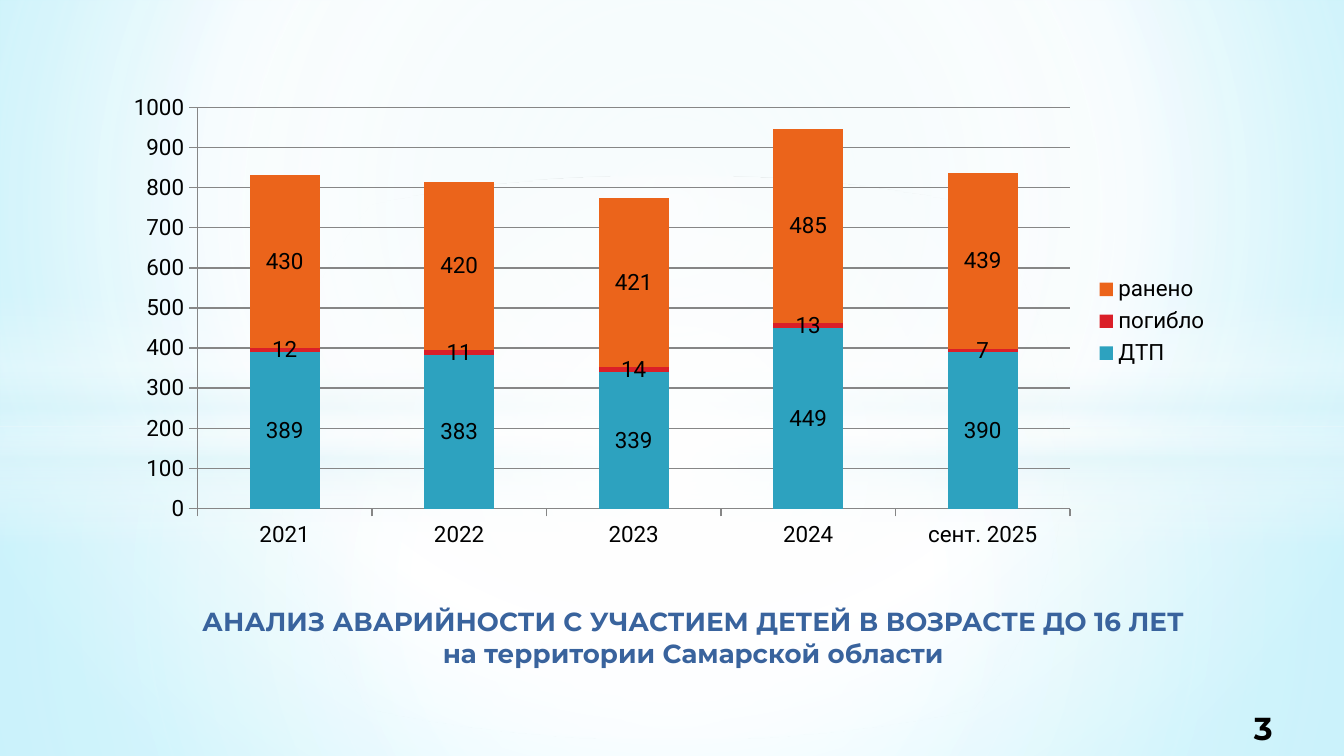
"""Builds a slide with a stacked column chart of road accidents involving children."""
from lxml import etree
from pptx import Presentation
from pptx import util as u
from pptx.chart.data import CategoryChartData
from pptx.dml.color import RGBColor
from pptx.enum import chart as ch, shapes, text
from pptx.oxml import ns

WIDTH = u.Inches(10)
HEIGHT = WIDTH * 9 // 16
COLORS = {"white": "FFFFFF", "pale": "DEF5FA", "mist": "CDEFF7", "sky": "7CE7FF",
          "black": "000000", "title": "39639D", "grid": "868686",
          "ДТП": "2DA2BF", "погибло": "DA1F28", "ранено": "EB641B"}
CENTER = (50, 50, 50, 50)
BACKDROP = [(0, "mist", 100), (60, "white", 100), (100, "sky", 100)]
GLOWS = [
    ("RECTANGLE", (0, 0.564, 1, 0.436), CENTER,
     [(0, "white", 91), (37, "white", 76), (100, "pale", 79)]),
    ("RECTANGLE", (0, 0, 1, 0.564), CENTER,
     [(0, "white", 89), (48, "white", 62), (100, "pale", 79)]),
    ("RECTANGLE", (0, 0.388, 1, 0.334), None,
     [(0, "white", 0), (29, "white", 30), (45, "pale", 40),
      (55, "white", 26), (65, "pale", 60), (100, "white", 0)]),
    ("OVAL", (0, 0.233, 1, 0.745), CENTER, [(0, "white", 100), (54, "white", 0)]),
]
YEARS = ["2021", "2022", "2023", "2024", "сент. 2025"]
SERIES = {"ДТП": (389, 383, 339, 449, 390),
          "погибло": (12, 11, 14, 13, 7),
          "ранено": (430, 420, 421, 485, 439)}
TITLE = ["АНАЛИЗ АВАРИЙНОСТИ С УЧАСТИЕМ ДЕТЕЙ В ВОЗРАСТЕ ДО 16 ЛЕТ",
         "на территории Самарской области"]


def color(name):
    """Look up a colour by its name."""
    return RGBColor.from_string(COLORS[name])


def area(left, top, width, height):
    """Turn shares of the slide into lengths."""
    return [round(share * side) for share, side in
            zip((left, top, width, height), (WIDTH, HEIGHT) * 2)]


def assign(target, values):
    """Set each named attribute of the target."""
    for name, value in values.items():
        setattr(target, name, value)


def paint_gradient(fill, root, stops, focus):
    """Fill with stops of (position, colour, opacity), round a focus or top down."""
    fill.gradient()
    gradient = root.find(".//" + ns.qn("a:gradFill"))
    for child in list(gradient):
        gradient.remove(child)
    stop_list = etree.SubElement(gradient, ns.qn("a:gsLst"))
    for position, name, opacity in stops:
        stop = etree.SubElement(stop_list, ns.qn("a:gs"), pos=str(position * 1000))
        tone = etree.SubElement(stop, ns.qn("a:srgbClr"), val=COLORS[name])
        if opacity < 100:
            etree.SubElement(tone, ns.qn("a:alpha"), val=str(opacity * 1000))
    if focus:
        round_fill = etree.SubElement(gradient, ns.qn("a:path"), path="circle")
        edges = {side: str(share * 1000) for side, share in zip("ltrb", focus)}
        etree.SubElement(round_fill, ns.qn("a:fillToRect"), **edges)
    else:
        etree.SubElement(gradient, ns.qn("a:lin"), ang="5400000", scaled="0")


def add_glow(page, kind, shares, focus, stops):
    """Add one translucent backdrop shape."""
    glow = page.shapes.add_shape(getattr(shapes.MSO_SHAPE, kind), *area(*shares))
    glow.shadow.inherit = False
    glow.line.fill.background()
    paint_gradient(glow.fill, glow._element, stops, focus)


def write_lines(box, lines, size, tone, align):
    """Write bold lines, one paragraph each."""
    frame = box.text_frame
    assign(frame, {"word_wrap": True, "vertical_anchor": text.MSO_ANCHOR.TOP,
                   "auto_size": text.MSO_AUTO_SIZE.SHAPE_TO_FIT_TEXT,
                   "margin_left": u.Inches(0.08), "margin_right": u.Inches(0.08),
                   "margin_top": u.Inches(0.04), "margin_bottom": u.Inches(0.04)})
    for index, line in enumerate(lines):
        para = frame.add_paragraph() if index else frame.paragraphs[0]
        para.alignment = align
        span = para.add_run()
        span.text = line
        assign(span.font, {"name": "Montserrat", "size": u.Pt(size), "bold": True})
        span.font.color.rgb = color(tone)


def style_axis(axis):
    """Give an axis outer ticks and grey lines."""
    assign(axis, {"major_tick_mark": ch.XL_TICK_MARK.OUTSIDE,
                  "minor_tick_mark": ch.XL_TICK_MARK.NONE})
    lines = [axis.format.line]
    if axis.has_major_gridlines:
        lines.append(axis.major_gridlines.format.line)
    for line in lines:
        line.color.rgb = color("grid")
        line.width = u.Pt(0.75)


def add_accident_chart(page, shares):
    """Add the stacked columns of accidents, deaths and injuries."""
    data = CategoryChartData()
    data.categories = YEARS
    for name, values in SERIES.items():
        data.add_series(name, values)
    chart = page.shapes.add_chart(
        ch.XL_CHART_TYPE.COLUMN_STACKED, *area(*shares), data).chart
    assign(chart, {"has_title": False, "has_legend": True})
    assign(chart.legend, {"position": ch.XL_LEGEND_POSITION.RIGHT,
                          "include_in_layout": False})
    assign(chart.font, {"name": "Roboto", "size": u.Pt(12)})
    chart.font.color.rgb = color("black")
    assign(chart.value_axis, {"minimum_scale": 0, "maximum_scale": 1000,
                              "major_unit": 100, "has_major_gridlines": True})
    for axis in (chart.category_axis, chart.value_axis):
        style_axis(axis)
    assign(chart.plots[0], {"gap_width": 150, "overlap": 100,
                            "vary_by_categories": False})
    for series in chart.plots[0].series:
        series.format.fill.solid()
        series.format.fill.fore_color.rgb = color(series.name)
        assign(series.data_labels, {"show_value": True,
                                    "position": ch.XL_LABEL_POSITION.CENTER})


def add_title(page, shares):
    """Place the title under the chart, in front of the backdrop."""
    title = page.shapes.title
    assign(title, dict(zip(("left", "top", "width", "height"), area(*shares))))
    write_lines(title, TITLE, 14, "title", text.PP_ALIGN.CENTER)
    page.shapes._spTree.append(title._element)


def main():
    """Build and save the deck."""
    deck = Presentation()
    assign(deck, {"slide_width": WIDTH, "slide_height": HEIGHT})
    page = deck.slides.add_slide(deck.slide_layouts[5])
    paint_gradient(page.background.fill, page._element, BACKDROP, (20, 10, 20, 60))
    for glow in GLOWS:
        add_glow(page, *glow)
    number = page.shapes.add_textbox(*area(0.925, 0.931, 0.052, 0.066))
    write_lines(number, ["3"], 17, "black", text.PP_ALIGN.LEFT)
    add_accident_chart(page, (0.083, 0.112, 0.827, 0.626))
    add_title(page, (0.083, 0.794, 0.866, 0.1))
    deck.save("out.pptx")


if __name__ == "__main__":
    main()
